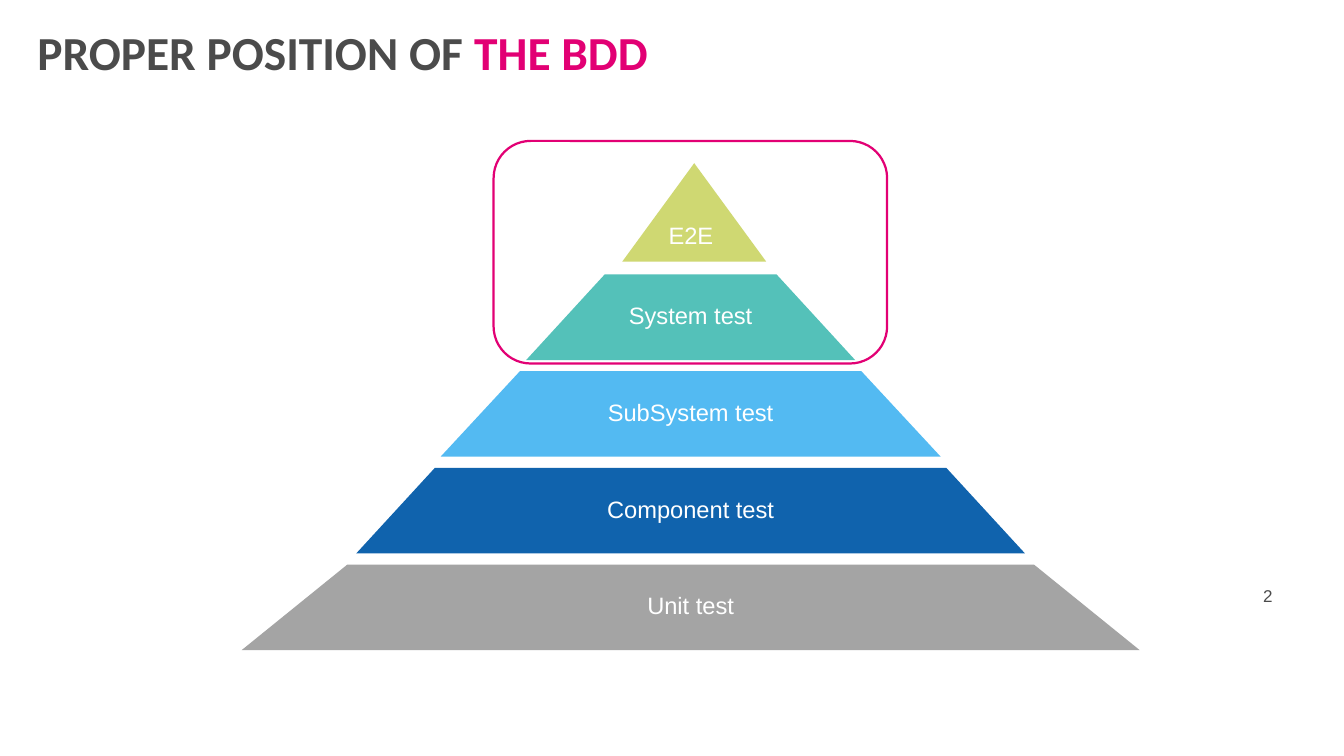
from pptx import Presentation
from pptx.dml.color import RGBColor
from pptx.enum.shapes import MSO_SHAPE
from pptx.enum.text import MSO_ANCHOR, PP_ALIGN
from pptx.oxml.ns import qn
from pptx.util import Pt
from lxml.etree import SubElement

WHITE = RGBColor(0xFF, 0xFF, 0xFF)
DARK = RGBColor(0x4B, 0x4B, 0x4B)
MAGENTA = RGBColor(0xE2, 0x00, 0x74)
LIME = RGBColor(0xBF, 0xCB, 0x44)
TEAL = RGBColor(0x1B, 0xAD, 0xA2)
SKY = RGBColor(0x53, 0xBA, 0xF2)
BLUE = RGBColor(0x10, 0x63, 0xAD)
GRAY = RGBColor(0xA4, 0xA4, 0xA4)

AXIS = 466.2
LAYER_TOP = 185.3
LAYER_STEP = 65.3
LAYER_HEIGHT = 57.8
LAYERS = [
    ("System test", TEAL, 116, 222),
    ("SubSystem test", SKY, 230.4, 337.6),
    ("Component test", BLUE, 345.2, 451.4),
    ("Unit test", GRAY, 463.4, 606.2),
]


class PyramidSlide:
    body_font = "Arial"
    title_font = "Calibri"
    label_size = 16
    label_inset = 5.76

    def __init__(self, prs):
        self.s = prs.slides.add_slide(prs.slide_layouts[6])

    def add_text(self, tf, runs, font, size, align, anchor, inset=0, bold=False, spacing=0.9):
        tf.word_wrap = True
        tf.vertical_anchor = anchor
        tf.margin_left = tf.margin_right = Pt(inset)
        tf.margin_top = tf.margin_bottom = Pt(inset)
        p = tf.paragraphs[0]
        p.alignment = align
        p.line_spacing = spacing
        for text, color in runs:
            r = p.add_run()
            r.text = text
            r.font.name = font
            r.font.size = Pt(size)
            r.font.bold = bold
            r.font.color.rgb = color

    def textbox(self, x, y, w, h, runs, **style):
        sp = self.s.shapes.add_textbox(Pt(x), Pt(y), Pt(w), Pt(h))
        self.add_text(sp.text_frame, runs, **style)

    def paint(self, sp, color):
        sp.shadow.inherit = False
        sp.fill.solid()
        sp.fill.fore_color.rgb = color
        sp.line.fill.background()

    def label(self, sp, text):
        self.add_text(sp.text_frame, [(text, WHITE)], self.body_font, self.label_size,
                      PP_ALIGN.CENTER, MSO_ANCHOR.MIDDLE, self.label_inset)

    def layer(self, y, h, top_width, bottom_width, color, text):
        corners = [
            (AXIS + top_width / 2, y),
            (AXIS + bottom_width / 2, y + h),
            (AXIS - bottom_width / 2, y + h),
        ]
        fb = self.s.shapes.build_freeform(Pt(AXIS - top_width / 2), Pt(y))
        fb.add_line_segments([(Pt(cx), Pt(cy)) for cx, cy in corners], close=True)
        sp = fb.convert_to_shape()
        self.paint(sp, color)
        self.label(sp, text)

    def peak(self, x, y, w, h, color, text):
        sp = self.s.shapes.add_shape(MSO_SHAPE.ISOSCELES_TRIANGLE, Pt(x), Pt(y), Pt(w), Pt(h))
        self.paint(sp, color)
        self.label(sp, text)

    def frame(self, x, y, w, h, color, opacity):
        sp = self.s.shapes.add_shape(MSO_SHAPE.ROUNDED_RECTANGLE, Pt(x), Pt(y), Pt(w), Pt(h))
        self.paint(sp, WHITE)
        srgb = sp.element.spPr.find(qn("a:solidFill")).find(qn("a:srgbClr"))
        SubElement(srgb, qn("a:alpha")).set("val", str(opacity * 1000))
        sp.line.color.rgb = color
        sp.line.width = Pt(1.5)


def main():
    prs = Presentation()
    prs.slide_width = Pt(907.2)
    prs.slide_height = Pt(510.5)
    slide = PyramidSlide(prs)
    slide.textbox(25.2, 20.2, 856, 39.6,
                  [("PROPER POSITION OF ", DARK), ("THE BDD", MAGENTA)],
                  font=slide.title_font, size=32, align=PP_ALIGN.LEFT,
                  anchor=MSO_ANCHOR.TOP, bold=True)
    slide.textbox(453.6, 389.5, 405.4, 25.2, [("2", DARK)],
                  font=slide.body_font, size=11.5, align=PP_ALIGN.RIGHT,
                  anchor=MSO_ANCHOR.MIDDLE, spacing=1.0)
    for i, (text, color, top_width, bottom_width) in enumerate(LAYERS):
        slide.layer(LAYER_TOP + i * LAYER_STEP, LAYER_HEIGHT,
                    top_width, bottom_width, color, text)
    slide.peak(420, 110.2, 97.2, 66.5, LIME, "E2E ")
    slide.frame(333.2, 95.2, 265.6, 150.3, MAGENTA, 25)
    prs.save("out.pptx")


if __name__ == "__main__":
    main()
